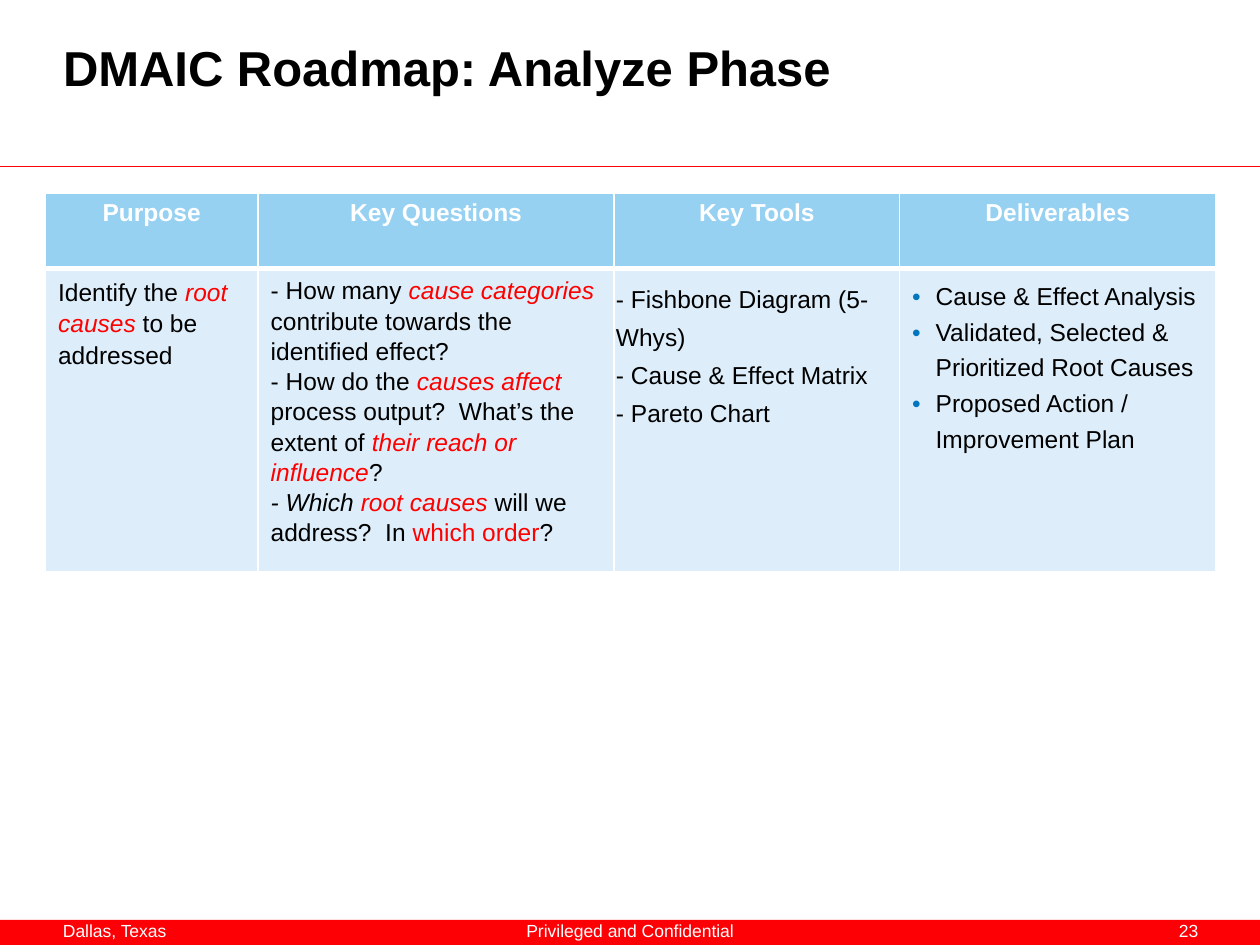
from lxml.etree import SubElement
from pptx import Presentation
from pptx.dml.color import RGBColor
from pptx.enum.shapes import MSO_CONNECTOR, MSO_SHAPE
from pptx.enum.text import MSO_ANCHOR, PP_ALIGN
from pptx.oxml.ns import qn
from pptx.util import Pt

RED, ACCENT, WHITE, BLACK = "FC0006", "FF0000", "FFFFFF", "000000"
HEADER_FILL, BODY_FILL, BULLET = "96D1F2", "DDEEFA", "0076BE"
COLUMNS = [121.5, 203.5, 163, 181]
ROWS = [43.2, 162]
HEADERS = ["Purpose", "Key Questions", "Key Tools", "Deliverables"]
PURPOSE = [[("Identify the ",), ("root causes", ACCENT, True), (" to be addressed",)]]
QUESTIONS = [
    [("- How many ",), ("cause categories", ACCENT, True),
     (" contribute towards the identified effect?",)],
    [("- How do the ",), ("causes affect", ACCENT, True),
     (" process output?  What’s the extent of ",),
     ("their reach or influence", ACCENT, True), ("?",)],
    [("- Which ", BLACK, True), ("root causes", ACCENT, True),
     (" will we address?  In ",), ("which order", ACCENT), ("?",)],
]
TOOLS = ["- Fishbone Diagram (5-Whys)", "- Cause & Effect Matrix", "- Pareto Chart"]
DELIVERABLES = ["Cause & Effect Analysis", "Validated, Selected & Prioritized Root Causes",
                "Proposed Action / Improvement Plan"]


def rgb(value):
    """Turn a hex string into a colour."""
    return RGBColor.from_string(value)


def add_bullet(paragraph, indent=13.5):
    """Give a paragraph a coloured bullet with a hanging indent."""
    properties = paragraph._p.get_or_add_pPr()
    properties.set("marL", str(Pt(indent)))
    properties.set("indent", str(-Pt(indent)))
    colour = SubElement(properties, qn("a:buClr"))
    SubElement(colour, qn("a:srgbClr"), val=BULLET)
    SubElement(properties, qn("a:buFont"), typeface="Arial")
    SubElement(properties, qn("a:buChar"), char="•")


def write(frame, paragraphs, size=14, color=BLACK, bold=False, align=PP_ALIGN.LEFT,
          spacing=1.0, bullet=False):
    """Fill a text frame with paragraphs, each a string or a list of runs."""
    for index, content in enumerate(paragraphs):
        paragraph = frame.add_paragraph() if index else frame.paragraphs[0]
        if bullet:
            add_bullet(paragraph)
        paragraph.alignment = align
        paragraph.line_spacing = spacing
        paragraph.space_before = Pt(0)
        runs = [(content,)] if isinstance(content, str) else content
        for text, *style in runs:
            run_color, italic = (style + [color, False][len(style):])
            run = paragraph.add_run()
            run.text = text
            run.font.name = "Arial"
            run.font.size = Pt(size)
            run.font.bold = bold
            run.font.italic = italic
            run.font.color.rgb = rgb(run_color)


def set_margins(frame, horizontal=0, vertical=0):
    """Wrap a text frame, anchor it at the top and set its margins."""
    frame.word_wrap = True
    frame.vertical_anchor = MSO_ANCHOR.TOP
    frame.margin_left = frame.margin_right = Pt(horizontal)
    frame.margin_top = frame.margin_bottom = Pt(vertical)


def add_text(slide, box, paragraphs, margins=(0, 0), **style):
    """Place a text box."""
    frame = slide.shapes.add_textbox(*map(Pt, box)).text_frame
    set_margins(frame, *margins)
    write(frame, paragraphs, **style)


def add_heading(slide, left, top, width, height):
    """Place the title and the full-width rule at the bottom of its box."""
    title = slide.shapes.title
    title.left, title.top, title.width, title.height = map(Pt, (left, top, width, height))
    set_margins(title.text_frame)
    write(title.text_frame, ["DMAIC Roadmap: Analyze Phase"], size=28, bold=True)
    bottom = Pt(top + height)
    rule = slide.shapes.add_connector(MSO_CONNECTOR.STRAIGHT, 0, bottom, Pt(720), bottom)
    rule.line.color.rgb = rgb(RED)
    rule.line.width = Pt(1)
    SubElement(rule._element.spPr, qn("a:effectLst"))


def format_cell(cell, fill, top_width, bottom_width):
    """Set the white borders and the fill of a cell."""
    properties = cell._tc.get_or_add_tcPr()
    for side, width in zip("LRTB", (1, 1, top_width, bottom_width)):
        border = SubElement(properties, qn(f"a:ln{side}"), w=str(Pt(width)))
        SubElement(SubElement(border, qn("a:solidFill")), qn("a:srgbClr"), val=WHITE)
    cell.fill.solid()
    cell.fill.fore_color.rgb = rgb(fill)


def add_roadmap(slide, left, top):
    """Place the roadmap table and the key tools over their cell."""
    table = slide.shapes.add_table(len(ROWS), len(COLUMNS), Pt(left), Pt(top),
                                   Pt(sum(COLUMNS)), Pt(sum(ROWS))).table
    for row, height in zip(table.rows, ROWS):
        row.height = Pt(height)
    for index, (width, header) in enumerate(zip(COLUMNS, HEADERS)):
        table.columns[index].width = Pt(width)
        format_cell(table.cell(0, index), HEADER_FILL, 1, 3)
        format_cell(table.cell(1, index), BODY_FILL, 3, 1)
        write(table.cell(0, index).text_frame, [header], color=WHITE, bold=True,
              align=PP_ALIGN.CENTER)
    write(table.cell(1, 0).text_frame, PURPOSE, spacing=1.15)
    write(table.cell(1, 1).text_frame, QUESTIONS, spacing=1.1)
    write(table.cell(1, 3).text_frame, DELIVERABLES, spacing=1.3, bullet=True)
    tools_left = left + sum(COLUMNS[:2]) - 3.5
    add_text(slide, (tools_left, top + ROWS[0] + 1.4, 161.3, 92.9), TOOLS,
             margins=(4.5, 2.2), spacing=1.3)


def add_footer(slide, left, top, width, height):
    """Place the footer band with its three texts."""
    band = slide.shapes.add_shape(MSO_SHAPE.RECTANGLE, *map(Pt, (left, top, width, height)))
    band.shadow.inherit = False
    band.fill.solid()
    band.fill.fore_color.rgb = rgb(RED)
    band.line.fill.background()
    texts = [(36, 86, "Dallas, Texas", PP_ALIGN.LEFT),
             (274.3, 171.4, "Privileged and Confidential", PP_ALIGN.CENTER),
             (623.5, 61.2, "23", PP_ALIGN.RIGHT)]
    for offset, text_width, text, align in texts:
        add_text(slide, (left + offset, top, text_width, height), [text], size=10,
                 color=WHITE, align=align)


def main():
    """Build and save the slide."""
    deck = Presentation()
    deck.slide_width, deck.slide_height = Pt(720), Pt(540)
    slide = deck.slides.add_slide(deck.slide_layouts[5])
    add_footer(slide, 0, 525.6, 720, 14.4)
    add_heading(slide, 36, 21.6, 648, 73.6)
    add_roadmap(slide, 26, 110.2)
    deck.save("out.pptx")


if __name__ == "__main__":
    main()
